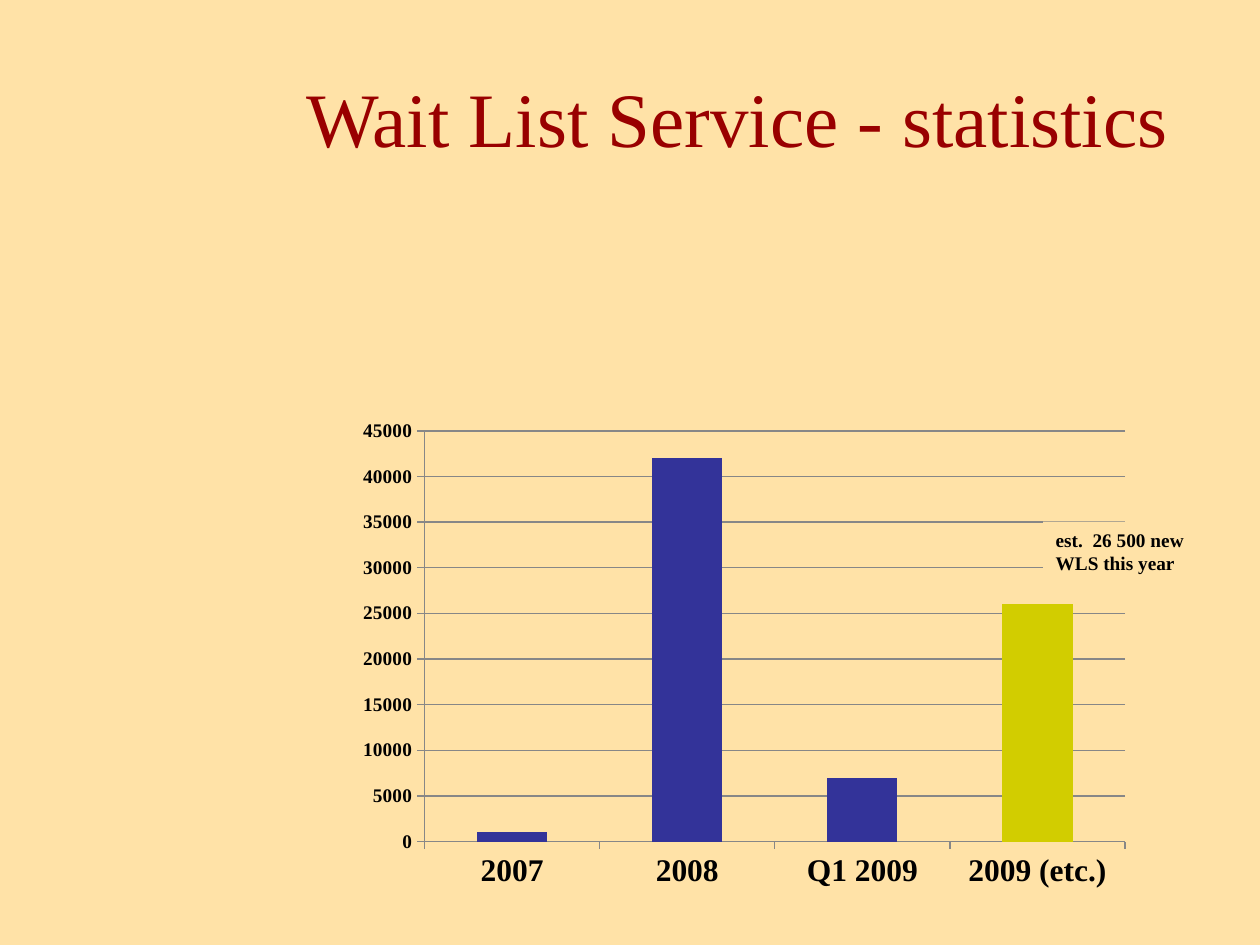
from dataclasses import dataclass

from lxml import etree
from pptx import Presentation
from pptx.chart.data import CategoryChartData
from pptx.dml.color import RGBColor
from pptx.enum import chart as ch, shapes, text
from pptx.oxml.ns import qn
from pptx.util import Inches, Pt


@dataclass(frozen=True)
class Theme:
    font: str = "Times New Roman"
    background: str = "FFE2A7"
    title: str = "990000"
    ink: str = "000000"
    grid: str = "878787"
    bar: str = "333399"
    estimate: str = "D2CD00"
    title_size: int = 44
    category_size: int = 18
    small_size: int = 11


THEME = Theme()
STATISTICS = {"2007": 1000, "2008": 42000, "Q1 2009": 7000, "2009 (etc.)": 26000}


def apply(target, values):
    for name, value in values.items():
        setattr(target, name, value)


def set_font(font, size, color=THEME.ink, bold=False):
    apply(font, {"name": THEME.font, "size": Pt(size), "bold": bold})
    font.color.rgb = RGBColor.from_string(color)


def set_fill(fill, color):
    fill.solid()
    fill.fore_color.rgb = RGBColor.from_string(color)


def set_line(line):
    line.width = Pt(0.75)
    line.color.rgb = RGBColor.from_string(THEME.grid)


def add_title(s, content, left, top, width, height):
    sp = s.shapes.title
    apply(sp, {"left": Inches(left), "top": Inches(top),
               "width": Inches(width), "height": Inches(height)})
    tf = sp.text_frame
    apply(tf, {"text": content, "vertical_anchor": text.MSO_ANCHOR.MIDDLE,
               "word_wrap": True, "auto_size": text.MSO_AUTO_SIZE.NONE})
    p = tf.paragraphs[0]
    p.alignment = text.PP_ALIGN.LEFT
    set_font(p.runs[0].font, THEME.title_size, THEME.title)


def set_plot_layout(chart, x, y, w, h):
    plot_area = chart.plots[0]._element.getparent()
    for old in plot_area.findall(qn("c:layout")):
        plot_area.remove(old)
    layout = etree.Element(qn("c:layout"))
    manual = etree.SubElement(layout, qn("c:manualLayout"))
    values = {"layoutTarget": "inner", "xMode": "edge", "yMode": "edge",
              "x": x, "y": y, "w": w, "h": h}
    for name, value in values.items():
        etree.SubElement(manual, qn(f"c:{name}")).set("val", str(value))
    plot_area.insert(0, layout)


def add_statistics_chart(s, left, top, width, height):
    data = CategoryChartData()
    data.categories = list(STATISTICS)
    data.add_series("Series 1", list(STATISTICS.values()))
    chart = s.shapes.add_chart(
        ch.XL_CHART_TYPE.COLUMN_CLUSTERED, Inches(left), Inches(top),
        Inches(width), Inches(height), data).chart
    apply(chart, {"has_legend": False, "has_title": False})
    set_font(chart.font, THEME.small_size)
    set_plot_layout(chart, 0.79 / width, 0.3 / height, 5.56 / width, 3.26 / height)

    plot = chart.plots[0]
    apply(plot, {"gap_width": 150, "vary_by_categories": False})
    series = plot.series[0]
    set_fill(series.format.fill, THEME.bar)
    set_fill(series.points[len(STATISTICS) - 1].format.fill, THEME.estimate)

    axes = ((chart.category_axis, THEME.category_size),
            (chart.value_axis, THEME.small_size))
    for axis, size in axes:
        axis.major_tick_mark = ch.XL_TICK_MARK.OUTSIDE
        set_font(axis.tick_labels.font, size, bold=True)
        set_line(axis.format.line)
    apply(chart.value_axis, {"minimum_scale": 0, "maximum_scale": 45000,
                             "major_unit": 5000, "has_major_gridlines": True})
    set_line(chart.value_axis.major_gridlines.format.line)


def add_note(s, content, left, top, width, height):
    sp = s.shapes.add_shape(shapes.MSO_SHAPE.RECTANGLE, Inches(left),
                            Inches(top), Inches(width), Inches(height))
    sp.shadow.inherit = False
    set_fill(sp.fill, THEME.background)
    sp.line.fill.background()
    tf = sp.text_frame
    apply(tf, {"text": content, "word_wrap": True,
               "vertical_anchor": text.MSO_ANCHOR.TOP})
    p = tf.paragraphs[0]
    p.alignment = text.PP_ALIGN.LEFT
    set_font(p.runs[0].font, THEME.small_size, bold=True)


def main():
    prs = Presentation()
    apply(prs, {"slide_width": Inches(10), "slide_height": Inches(7.5)})
    s = prs.slides.add_slide(prs.slide_layouts.get_by_name("Title Only"))
    set_fill(s.background.fill, THEME.background)
    add_title(s, "Wait List Service - statistics", 2.33, 0.3, 7.42, 1.25)
    add_statistics_chart(s, 2.58, 3.12, 6.64, 4.06)
    add_note(s, "est.  26 500 new WLS this year", 8.28, 4.14, 1.33, 0.55)
    prs.save("out.pptx")


if __name__ == "__main__":
    main()
